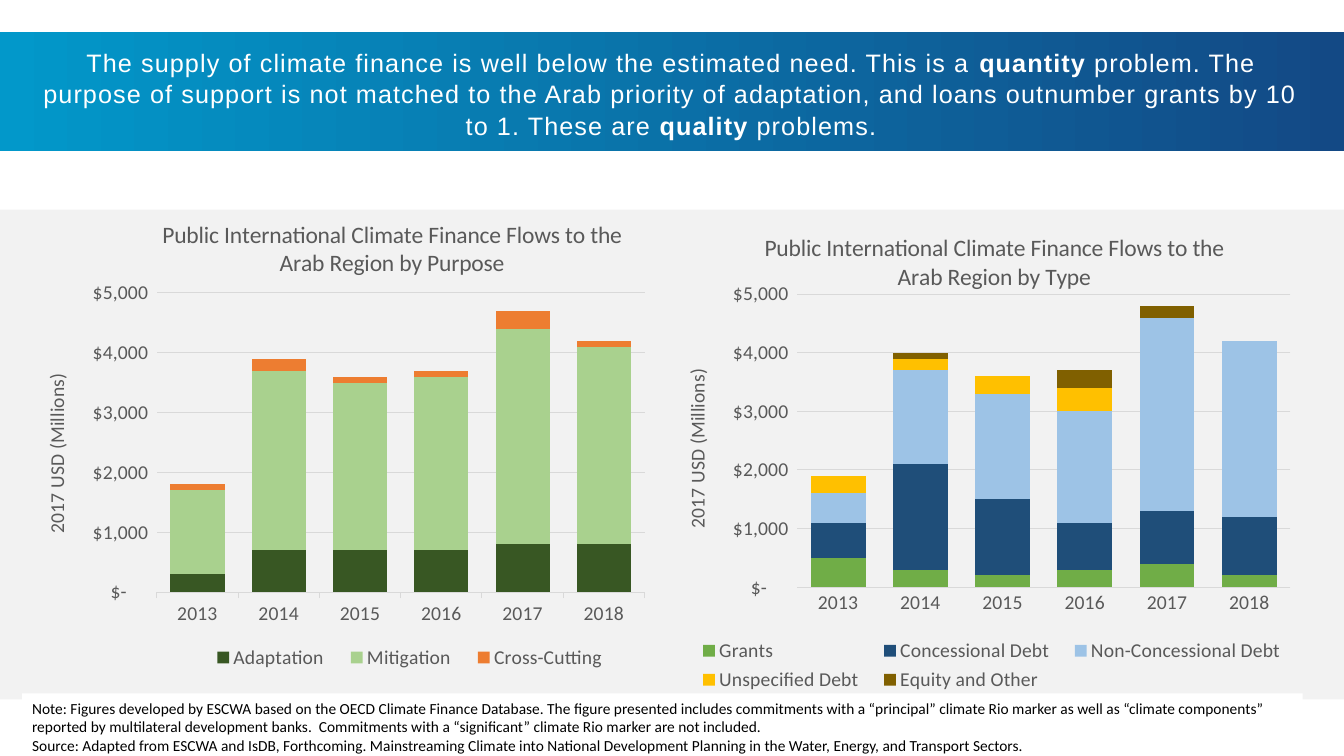
from lxml.etree import SubElement
from pptx import Presentation
from pptx.chart.data import CategoryChartData
from pptx.dml.color import RGBColor
from pptx.enum.chart import XL_CHART_TYPE as ChartType
from pptx.enum.chart import XL_LEGEND_POSITION as LegendPosition
from pptx.enum.chart import XL_TICK_MARK as TickMark
from pptx.enum.shapes import MSO_SHAPE as ShapeKind
from pptx.enum.text import MSO_ANCHOR as Anchor
from pptx.enum.text import MSO_AUTO_SIZE as AutoSize
from pptx.enum.text import PP_ALIGN as Align
from pptx.oxml.ns import qn
from pptx.util import Inches, Pt

COLORS = {
    "white": "FFFFFF", "black": "000000", "band_start": "0298CA", "band_end": "134985",
    "panel": "F2F2F2", "label": "595959", "grid": "D9D9D9",
    "dark_green": "385723", "light_green": "A9D18E", "orange": "ED7D31",
    "green": "70AD47", "navy": "1F4E79", "sky": "9DC3E6", "gold": "FFC000", "brown": "806000",
}
YEARS = ["2013", "2014", "2015", "2016", "2017", "2018"]
DOLLARS = r'_("$"* #,##0_);_("$"* \(#,##0\);_("$"* "-"??_);_(@_)'
HEADLINE = [
    ("The supply of climate finance is well below the estimated need. This is a ", False),
    ("quantity", True),
    (" problem. The purpose of support is not matched to the Arab priority of adaptation, "
     "and loans outnumber grants by 10 to 1. These are ", False),
    ("quality", True),
    (" problems.", False),
]
NOTES = [
    "Note: Figures developed by ESCWA based on the OECD Climate Finance Database. The figure "
    "presented includes commitments with a “principal” climate Rio marker as well as “climate "
    "components” reported by multilateral development banks.  Commitments with a “significant” "
    "climate Rio marker are not included.",
    "Source: Adapted from ESCWA and IsDB, Forthcoming. Mainstreaming Climate into National "
    "Development Planning in the Water, Energy, and Transport Sectors.",
]
PURPOSE = {
    "title": "Public International Climate Finance Flows to the Arab Region by Purpose",
    "series": [
        ("Adaptation", "dark_green", [300, 700, 700, 700, 800, 800]),
        ("Mitigation", "light_green", [1400, 3000, 2800, 2900, 3600, 3300]),
        ("Cross-Cutting", "orange", [100, 200, 100, 100, 300, 100]),
    ],
    "tick": TickMark.OUTSIDE,
    "title_at": (0.22, 0.02),
    "plot_at": (0.218, 0.185, 0.756, 0.628),
    "legend_at": (0.28, 0.91, 0.66, 0.08),
}
KIND = {
    "title": "Public International Climate Finance Flows to the Arab Region by Type",
    "series": [
        ("Grants", "green", [500, 300, 200, 300, 400, 200]),
        ("Concessional Debt", "navy", [600, 1800, 1300, 800, 900, 1000]),
        ("Non-Concessional Debt", "sky", [500, 1600, 1800, 1900, 3300, 3000]),
        ("Unspecified Debt", "gold", [300, 200, 300, 400, 0, 0]),
        ("Equity and Other", "brown", [0, 100, 0, 300, 200, 0]),
    ],
    "tick": TickMark.NONE,
    "title_at": (0.14, 0.04),
    "plot_at": (0.198, 0.166, 0.778, 0.556),
    "legend_at": (0.02, 0.81, 0.97, 0.12),
}


def rgb(name):
    """Return the named colour."""
    return RGBColor.from_string(COLORS[name])


def style_font(font, size, color, name="Calibri", bold=False):
    """Set typeface, size, colour and weight."""
    font.name, font.size, font.bold = name, Pt(size), bold
    font.color.rgb = rgb(color)


def add_rectangle(slide, box, color):
    """Add a plain rectangle without outline or shadow."""
    shape = slide.shapes.add_shape(ShapeKind.RECTANGLE, *map(Inches, box))
    shape.shadow.inherit = False
    shape.line.fill.background()
    shape.fill.solid()
    shape.fill.fore_color.rgb = rgb(color)
    return shape


def add_header(slide, box):
    """Place the gradient band with the headline on it."""
    left, top, width, height = box
    band = add_rectangle(slide, box, "band_start")
    band.fill.gradient()
    band.fill.gradient_angle = 0
    for stop, color in zip(band.fill.gradient_stops, ("band_start", "band_end")):
        stop.color.rgb = rgb(color)
    title = slide.shapes.title
    title.left, title.top = Inches(left + 0.3), Inches(top + 0.08)
    title.width, title.height = Inches(width - 0.62), Inches(height - 0.12)
    band.element.addnext(title.element)
    frame = title.text_frame
    frame.word_wrap, frame.auto_size = True, AutoSize.NONE
    frame.vertical_anchor = Anchor.TOP
    paragraph = frame.paragraphs[0]
    paragraph.alignment, paragraph.line_spacing = Align.CENTER, 1.05
    for text, bold in HEADLINE:
        run = paragraph.add_run()
        run.text = text
        style_font(run.font, 18, "white", "Arial", bold)
        run.font._element.set("spc", "80")


def set_layout(parent, index, position, inner=False):
    """Fix a chart part at fractions of the chart area."""
    for old in parent.findall(qn("c:layout")):
        parent.remove(old)
    layout = parent.makeelement(qn("c:layout"))
    parent.insert(index, layout)
    manual = SubElement(layout, qn("c:manualLayout"))
    settings = [("layoutTarget", "inner")] if inner else []
    settings += [("xMode", "edge"), ("yMode", "edge")]
    settings += zip("xywh", position)
    for tag, value in settings:
        SubElement(manual, qn("c:" + tag)).set("val", str(value))


def add_title_run(chart_title, text, size):
    """Write a chart or axis title."""
    run = chart_title.text_frame.paragraphs[0].add_run()
    run.text = text
    style_font(run.font, size, "label")


def style_axes(chart, tick):
    """Format both axes and the gridlines."""
    years, values = chart.category_axis, chart.value_axis
    for axis in (years, values):
        style_font(axis.tick_labels.font, 14, "label")
        axis.major_tick_mark = axis.minor_tick_mark = TickMark.NONE
    years.major_tick_mark = tick
    values.minimum_scale, values.maximum_scale, values.major_unit = 0, 5000, 1000
    values.tick_labels.number_format = DOLLARS
    values.tick_labels.number_format_is_linked = False
    values.format.line.fill.background()
    for line in (years.format.line, values.major_gridlines.format.line):
        line.color.rgb, line.width = rgb("grid"), Pt(0.75)
    add_title_run(values.axis_title, "2017 USD (Millions)", 14)
    values.axis_title.text_frame._txBody.bodyPr.set("rot", "-5400000")


def add_flow_chart(slide, box, details):
    """Place one stacked column chart of finance flows."""
    data = CategoryChartData()
    data.categories = YEARS
    for name, _, values in details["series"]:
        data.add_series(name, values)
    frame = slide.shapes.add_chart(ChartType.COLUMN_STACKED, *map(Inches, box), data)
    chart = frame.chart
    style_font(chart.font, 14, "black")
    plot = chart.plots[0]
    plot.gap_width, plot.overlap, plot.vary_by_categories = 50, 100, False
    for series, (_, color, _) in zip(plot.series, details["series"]):
        series.format.fill.solid()
        series.format.fill.fore_color.rgb = rgb(color)
    style_axes(chart, details["tick"])
    chart.has_title = chart.has_legend = True
    add_title_run(chart.chart_title, details["title"], 16.8)
    chart.legend.position = LegendPosition.BOTTOM
    chart.legend.include_in_layout = False
    style_font(chart.legend.font, 14, "label")
    set_layout(chart.chart_title._element, 1, details["title_at"])
    set_layout(chart.legend._element, 1, details["legend_at"])
    set_layout(chart._chartSpace.find(".//" + qn("c:plotArea")), 0, details["plot_at"], True)


def add_notes(slide, box):
    """Place the white box with note and source."""
    frame = add_rectangle(slide, box, "white").text_frame
    frame.word_wrap, frame.vertical_anchor = True, Anchor.MIDDLE
    for index, text in enumerate(NOTES):
        paragraph = frame.add_paragraph() if index else frame.paragraphs[0]
        paragraph.alignment = Align.LEFT
        run = paragraph.add_run()
        run.text = text
        style_font(run.font, 11, "black")


def main():
    """Build and save the slide."""
    presentation = Presentation()
    presentation.slide_width, presentation.slide_height = Inches(13.33), Inches(7.5)
    slide = presentation.slides.add_slide(presentation.slide_layouts[5])
    add_header(slide, (0, 0.32, 13.33, 1.18))
    add_rectangle(slide, (0, 2.08, 13.33, 4.86), "panel")
    add_flow_chart(slide, (0.16, 2.03, 6.4, 4.73), PURPOSE)
    add_notes(slide, (0.22, 6.88, 12.7, 0.66))
    add_flow_chart(slide, (6.66, 2.05, 6.29, 5.23), KIND)
    presentation.save("out.pptx")


if __name__ == "__main__":
    main()
